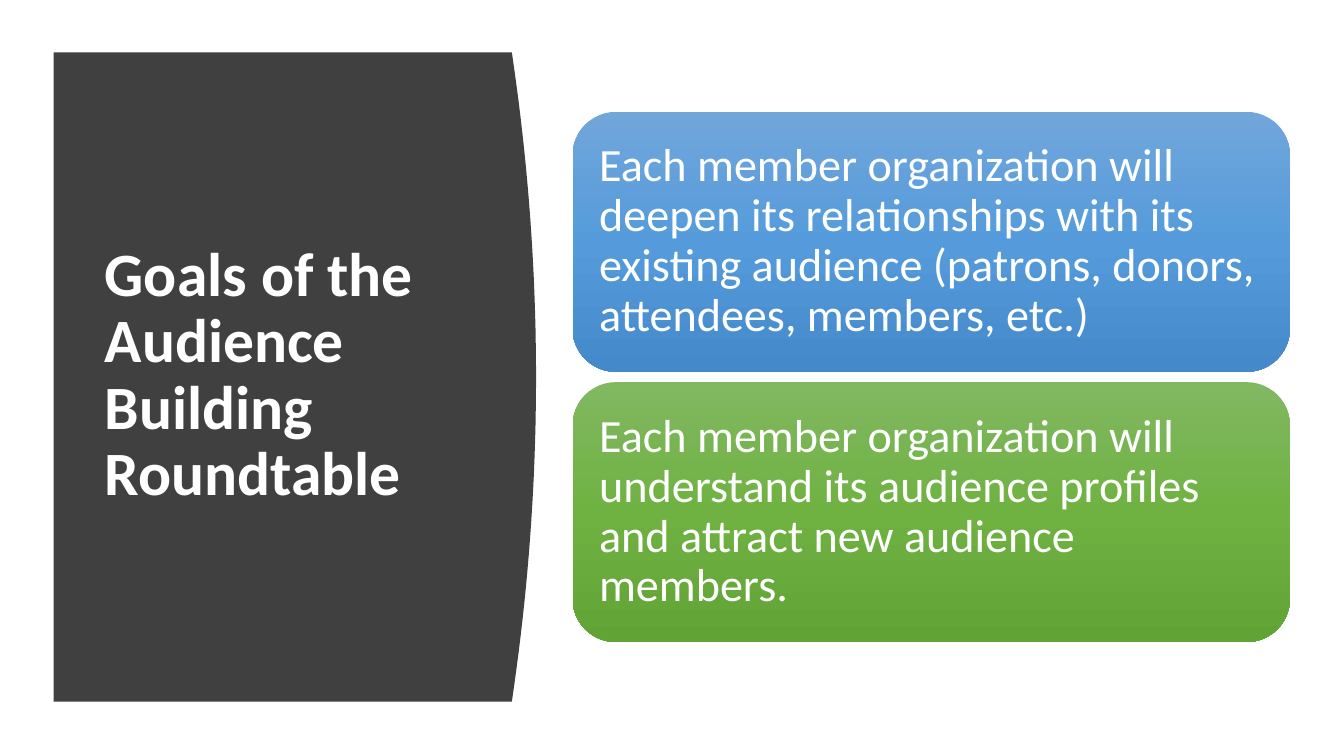
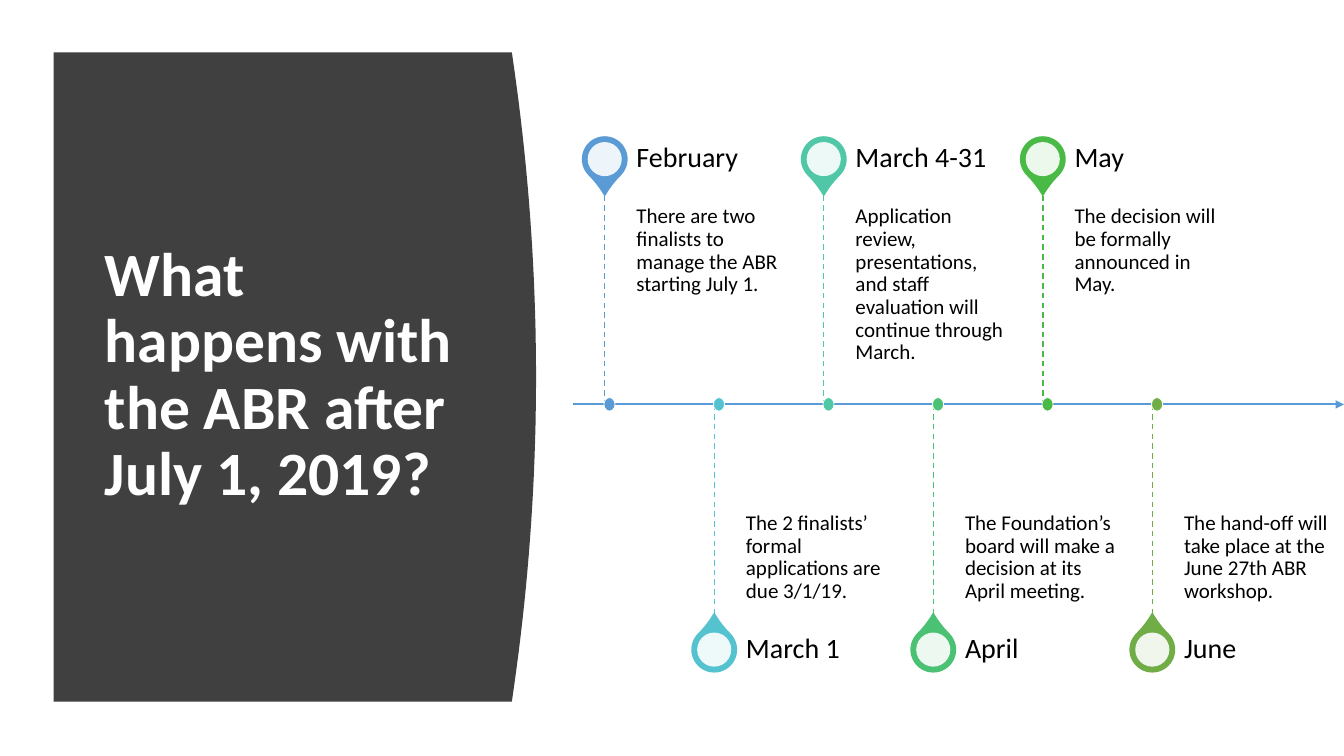
from copy import deepcopy
from dataclasses import dataclass

from lxml import etree
from pptx import Presentation
from pptx.dml.color import RGBColor
from pptx.enum import dml, shapes, text
from pptx.oxml.ns import qn
from pptx.util import Cm, Pt

FONT = "Calibri"
WHITE = RGBColor(0xFF, 0xFF, 0xFF)
BLACK = RGBColor(0x00, 0x00, 0x00)
CHARCOAL = RGBColor(0x40, 0x40, 0x40)
BLUE = RGBColor(0x5B, 0x9B, 0xD5)
CYAN = RGBColor(0x55, 0xC3, 0xCF)
TEAL = RGBColor(0x50, 0xC8, 0xA7)
MINT = RGBColor(0x4B, 0xC1, 0x74)
GREEN = RGBColor(0x4A, 0xBA, 0x46)
OLIVE = RGBColor(0x70, 0xAD, 0x47)
BLUE_GRADIENT = (RGBColor(0x71, 0xA6, 0xDB), RGBColor(0x55, 0x9B, 0xDB), RGBColor(0x44, 0x8A, 0xCA))
GREEN_GRADIENT = (RGBColor(0x81, 0xB8, 0x61), RGBColor(0x6F, 0xB2, 0x42), RGBColor(0x62, 0xA3, 0x36))

PANEL_LEFT, PANEL_TOP, PANEL_HEIGHT = 1.35, 1.32, 16.36
PANEL_EDGE, PANEL_BULGE, PANEL_STEPS = 12.9, 0.61, 40
CONTENT_LEFT, SLIDE_WIDTH, SLIDE_HEIGHT = 14.43, 33.87, 19.05

CARD_TOP, CARD_WIDTH, CARD_HEIGHT, CARD_GAP = 2.82, 18.08, 6.55, 0.26

AXIS_Y, FIRST_STEM, STEM_STEP, STEM_LENGTH = 10.19, 15.24, 2.76, 5.26
PIN_DISTANCE, PIN_SIZE, DISC_SIZE = 6.18, 1.12, 0.86
LABEL_OFFSET, LABEL_WIDTH, LABEL_HEIGHT = 0.8, 3.98, 1.85
DOT_OFFSET, DOT_WIDTH, DOT_HEIGHT = 0.12, 0.28, 0.34


@dataclass(frozen=True)
class Goal:
    wording: str
    gradient: tuple[RGBColor, ...]


@dataclass(frozen=True)
class Milestone:
    date: str
    detail: str
    color: RGBColor


GOALS = (
    Goal(
        "Each member organization will deepen its relationships with its existing audience "
        "(patrons, donors, attendees, members, etc.)",
        BLUE_GRADIENT,
    ),
    Goal(
        "Each member organization will understand its audience profiles and attract new audience members.",
        GREEN_GRADIENT,
    ),
)

MILESTONES = (
    Milestone("February", "There are two finalists to manage the ABR starting July 1.", BLUE),
    Milestone("March 1", "The 2 finalists’ formal applications are due 3/1/19.", CYAN),
    Milestone(
        "March 4-31",
        "Application review, presentations, and staff evaluation will continue through March.",
        TEAL,
    ),
    Milestone("April", "The Foundation’s board will make a decision at its April meeting.", MINT),
    Milestone("May", "The decision will be formally announced in May.", GREEN),
    Milestone("June", "The hand-off will take place at the June 27th ABR workshop.", OLIVE),
)


def write(
    shape,
    wording: str,
    size: float,
    color: RGBColor,
    anchor: text.MSO_ANCHOR,
    insets: tuple[float, float, float, float],
    bold: bool = False,
) -> None:
    frame = shape.text_frame
    frame.word_wrap = True
    frame.auto_size = text.MSO_AUTO_SIZE.NONE
    frame.vertical_anchor = anchor
    frame.margin_left, frame.margin_top, frame.margin_right, frame.margin_bottom = map(Cm, insets)
    frame.text = wording
    paragraph = frame.paragraphs[0]
    paragraph.alignment = text.PP_ALIGN.LEFT
    paragraph.line_spacing = 0.9
    font = paragraph.font
    font.name, font.size, font.bold = FONT, Pt(size), bold
    font.color.rgb = color


def add_panel(slide) -> None:
    middle = PANEL_TOP + PANEL_HEIGHT / 2
    edge = []
    for step in range(PANEL_STEPS + 1):
        position = 2 * step / PANEL_STEPS - 1
        x = PANEL_EDGE + PANEL_BULGE * (1 - position**2)
        edge.append((Cm(x), Cm(middle + position * PANEL_HEIGHT / 2)))
    builder = slide.shapes.build_freeform(Cm(PANEL_LEFT), Cm(PANEL_TOP))
    builder.add_line_segments([*edge, (Cm(PANEL_LEFT), Cm(PANEL_TOP + PANEL_HEIGHT))], close=True)
    panel = builder.convert_to_shape()
    panel.shadow.inherit = False
    panel.fill.solid()
    panel.fill.fore_color.rgb = CHARCOAL
    panel.line.fill.background()
    slide.shapes.element.insert(2, panel.element)


def add_titled_slide(presentation, wording: str):
    slide = presentation.slides.add_slide(presentation.slide_layouts[5])
    add_panel(slide)
    title = slide.shapes.title
    title.left, title.top, title.width, title.height = Cm(2.39), Cm(2.82), Cm(9.5), Cm(13.31)
    write(title, wording, 44, WHITE, text.MSO_ANCHOR.MIDDLE, (0.25, 0.13, 0.25, 0.13), bold=True)
    return slide


def add_card(slide, goal: Goal, top: float) -> None:
    card = slide.shapes.add_shape(
        shapes.MSO_SHAPE.ROUNDED_RECTANGLE, Cm(CONTENT_LEFT), Cm(top), Cm(CARD_WIDTH), Cm(CARD_HEIGHT)
    )
    card.shadow.inherit = False
    card.line.fill.background()
    card.fill.gradient()
    card.fill.gradient_angle = 270
    stop_list = card.element.spPr.find(".//" + qn("a:gsLst"))
    stop_list.append(deepcopy(stop_list[0]))
    for stop, color, position in zip(card.fill.gradient_stops, goal.gradient, (0, 0.5, 1)):
        stop.color.rgb = color
        stop.position = position
    write(card, goal.wording, 33, WHITE, text.MSO_ANCHOR.MIDDLE, (0.35, 0.35, 0.35, 0.35))


def add_centered(
    slide, kind: shapes.MSO_SHAPE, x: float, y: float, width: float, height: float, color: RGBColor
):
    shape = slide.shapes.add_shape(
        kind, Cm(x - width / 2), Cm(y - height / 2), Cm(width), Cm(height)
    )
    shape.shadow.inherit = False
    shape.fill.solid()
    shape.fill.fore_color.rgb = color
    shape.line.fill.background()
    return shape


def add_line(
    slide, start: tuple[float, float], end: tuple[float, float], color: RGBColor, width: float
):
    line = slide.shapes.add_connector(shapes.MSO_CONNECTOR.STRAIGHT, *map(Cm, start + end))
    line.line.color.rgb = color
    line.line.width = Pt(width)
    etree.SubElement(line.element.spPr, qn("a:effectLst"))
    return line


def add_label(slide, left: float, top: float, height: float, *style) -> None:
    label = slide.shapes.add_textbox(Cm(left), Cm(top), Cm(LABEL_WIDTH), Cm(height))
    write(label, *style)


def add_pin(slide, x: float, y: float, rotation: float, color: RGBColor) -> None:
    pin = add_centered(slide, shapes.MSO_SHAPE.TEAR, x, y, PIN_SIZE, PIN_SIZE, color)
    pin.adjustments[0] = 1.15
    pin.rotation = rotation
    pin.line.color.rgb = color
    pin.line.width = Pt(1)
    disc = add_centered(slide, shapes.MSO_SHAPE.OVAL, x, y, DISC_SIZE, DISC_SIZE, WHITE)
    disc_color = disc.element.spPr.find(qn("a:solidFill"))[0]
    etree.SubElement(disc_color, qn("a:alpha"), val="90000")


def add_milestone(slide, milestone: Milestone, x: float, above: bool) -> None:
    direction = -1 if above else 1
    stem_end = AXIS_Y + direction * STEM_LENGTH
    add_pin(slide, x, AXIS_Y + direction * PIN_DISTANCE, 135 if above else 315, milestone.color)

    left = x + LABEL_OFFSET
    anchor = text.MSO_ANCHOR.TOP if above else text.MSO_ANCHOR.BOTTOM
    insets = (0, 0.25, 0.25, 0.41) if above else (0, 0.41, 0, 0.25)
    add_label(
        slide, left, min(AXIS_Y, stem_end), STEM_LENGTH, milestone.detail, 15, BLACK, anchor, insets
    )
    date_top = stem_end - LABEL_HEIGHT if above else stem_end
    add_label(
        slide, left, date_top, LABEL_HEIGHT,
        milestone.date, 20, BLACK, text.MSO_ANCHOR.MIDDLE, (0, 0, 0.35, 0),
    )

    stem = add_line(slide, (x, min(AXIS_Y, stem_end)), (x, max(AXIS_Y, stem_end)), milestone.color, 1)
    stem.line.dash_style = dml.MSO_LINE.DASH
    dot = add_centered(
        slide, shapes.MSO_SHAPE.OVAL, x + DOT_OFFSET, AXIS_Y, DOT_WIDTH, DOT_HEIGHT, milestone.color
    )
    dot.line.color.rgb = WHITE
    dot.line.width = Pt(0.5)


def build_goals(presentation) -> None:
    slide = add_titled_slide(presentation, "Goals of the Audience Building Roundtable")
    for index, goal in enumerate(GOALS):
        add_card(slide, goal, CARD_TOP + index * (CARD_HEIGHT + CARD_GAP))


def build_timeline(presentation) -> None:
    slide = add_titled_slide(presentation, "What happens with the ABR after July 1, 2019?")
    axis = add_line(slide, (CONTENT_LEFT, AXIS_Y), (SLIDE_WIDTH, AXIS_Y), BLUE, 1.5)
    etree.SubElement(axis.element.spPr.find(qn("a:ln")), qn("a:tailEnd"), type="triangle")
    for index, milestone in enumerate(MILESTONES):
        add_milestone(slide, milestone, FIRST_STEM + index * STEM_STEP, above=index % 2 == 0)


def main() -> None:
    presentation = Presentation()
    presentation.slide_width, presentation.slide_height = Cm(SLIDE_WIDTH), Cm(SLIDE_HEIGHT)
    build_goals(presentation)
    build_timeline(presentation)
    presentation.save("out.pptx")


if __name__ == "__main__":
    main()
